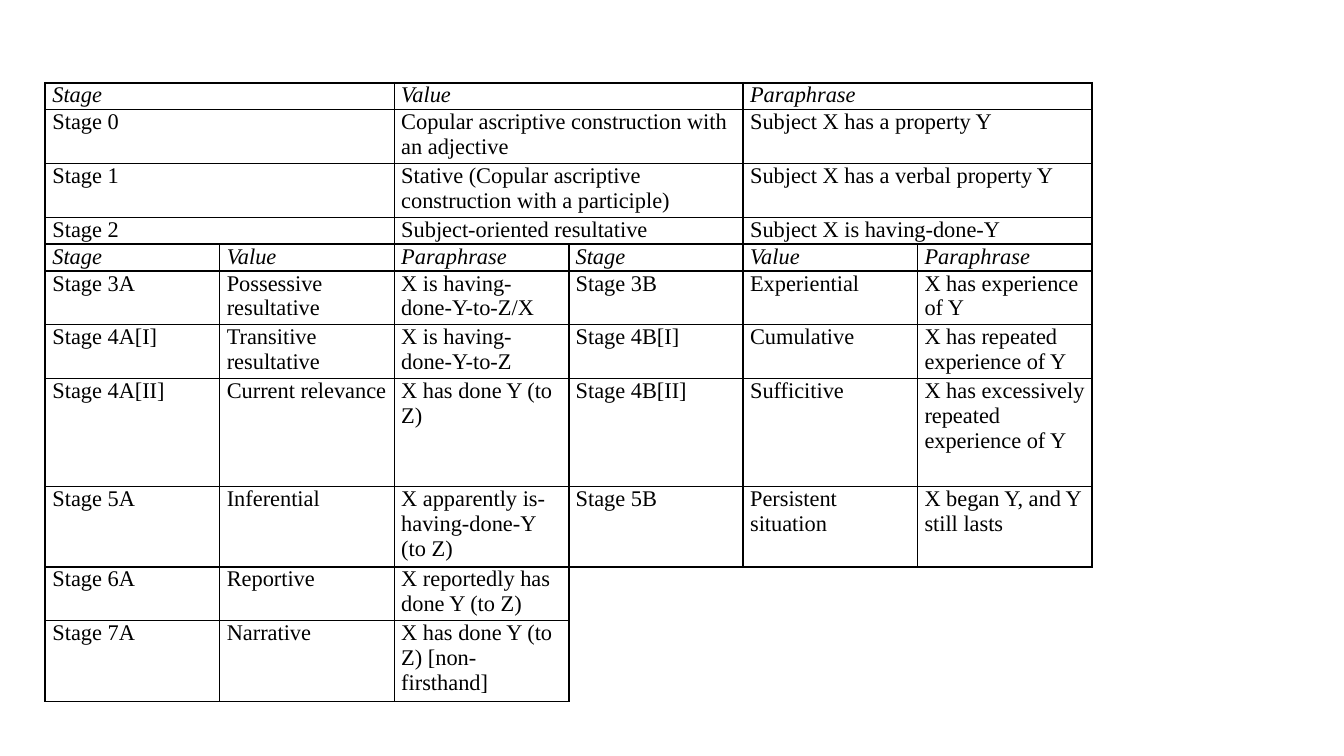
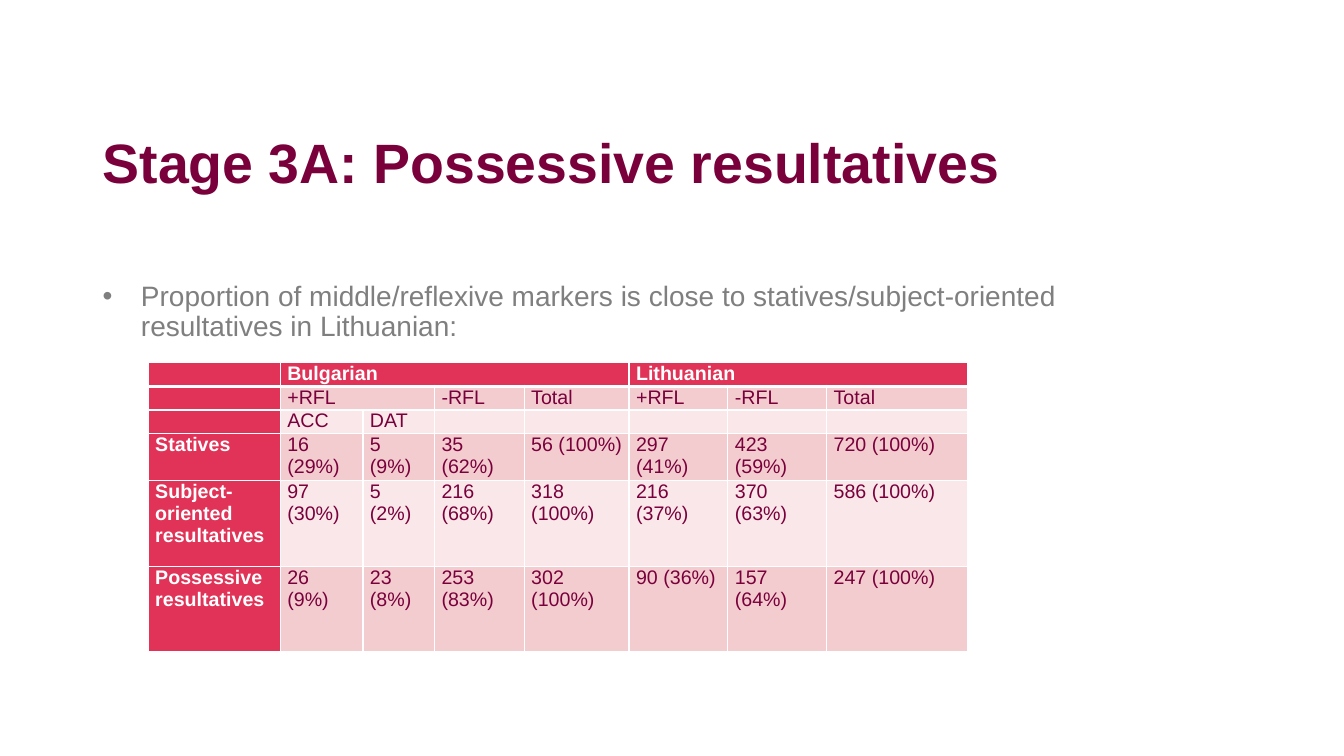
from dataclasses import dataclass
from typing import Optional

from lxml.etree import SubElement
from pptx import Presentation
from pptx.dml.color import RGBColor
from pptx.enum.text import MSO_ANCHOR, PP_ALIGN
from pptx.oxml.ns import qn
from pptx.util import Inches, Pt

BLACK, WHITE, GREY = "000000", "FFFFFF", "7F7F7F"
PLUM, CRIMSON, ROSE, BLUSH = "7A003B", "E03357", "F3CCD0", "F9E7E9"
SERIF, SANS = "Times New Roman", "Arial"
PLAIN_TABLE_STYLE = "{2D5ABB26-0587-4C30-8999-92F81FD0307C}"
Grid = list[list[Optional[str]]]


@dataclass(frozen=True)
class TextStyle:
    font: str
    size: float
    color: str
    bold: bool = False
    italic: bool = False
    align: PP_ALIGN = PP_ALIGN.LEFT


@dataclass(frozen=True)
class Borders:
    color: str
    left: float
    right: float
    top: float
    bottom: float


@dataclass(frozen=True)
class CellStyle:
    text: TextStyle
    fill: Optional[str] = None
    borders: Optional[Borders] = None


@dataclass(frozen=True)
class Block:
    first_row: int
    last_row: int
    first_column: int
    last_column: int

    def contains(self, row: int, column: int) -> bool:
        return (self.first_row <= row <= self.last_row
                and self.first_column <= column <= self.last_column)


TITLE = TextStyle(SANS, 39.6, PLUM, bold=True)
BODY = TextStyle(SANS, 20, GREY)
STAGE = TextStyle(SERIF, 16, BLACK)
STAGE_HEADER = TextStyle(SERIF, 16, BLACK, italic=True)
COUNT = TextStyle(SANS, 14, PLUM, align=PP_ALIGN.JUSTIFY)
COUNT_HEADER = TextStyle(SANS, 14, WHITE, bold=True, align=PP_ALIGN.JUSTIFY)

STAGES: Grid = [
    ["Stage", None, "Value", None, "Paraphrase", None],
    ["Stage 0", None, "Copular ascriptive construction with an adjective", None,
     "Subject X has a property Y", None],
    ["Stage 1", None, "Stative (Copular ascriptive construction with a participle)", None,
     "Subject X has a verbal property Y", None],
    ["Stage 2", None, "Subject-oriented resultative", None, "Subject X is having-done-Y", None],
    ["Stage", "Value", "Paraphrase", "Stage", "Value", "Paraphrase"],
    ["Stage 3A", "Possessive resultative", "X is having-done-Y-to-Z/X",
     "Stage 3B", "Experiential", "X has experience of Y"],
    ["Stage 4A[I]", "Transitive resultative", "X is having-done-Y-to-Z",
     "Stage 4B[I]", "Cumulative", "X has repeated experience of Y"],
    ["Stage 4A[II]", "Current relevance", "X has done Y (to Z)",
     "Stage 4B[II]", "Sufficitive", "X has excessively repeated experience of Y"],
    ["Stage 5A", "Inferential", "X apparently is-having-done-Y (to Z)",
     "Stage 5B", "Persistent situation", "X began Y, and Y still lasts"],
    ["Stage 6A", "Reportive", "X reportedly has done Y (to Z)", "", None, None],
    ["Stage 7A", "Narrative", "X has done Y (to Z) [non-firsthand]", "", None, None],
]
STAGE_LINES = [1, 2, 2, 1, 1, 2, 2, 4, 3, 2, 3]
STAGE_TABLE_HEIGHT = 6.14
STAGE_BLOCKS = [Block(0, 3, 0, 5), Block(4, 10, 0, 2), Block(4, 8, 3, 5)]

COUNTS: Grid = [
    ["", "Bulgarian", None, None, None, "Lithuanian", None, None],
    ["", "+RFL", None, "-RFL", "Total", "+RFL", "-RFL", "Total"],
    ["", "ACC", "DAT", "", "", "", "", ""],
    ["Statives", "16 (29%)", "5 (9%)", "35 (62%)", "56 (100%)",
     "297 (41%)", "423 (59%)", "720 (100%)"],
    ["Subject-oriented resultatives", "97 (30%)", "5 (2%)", "216 (68%)", "318 (100%)",
     "216 (37%)", "370 (63%)", "586 (100%)"],
    ["Possessive resultatives", "26 (9%)", "23 (8%)", "253 (83%)", "302 (100%)",
     "90 (36%)", "157 (64%)", "247 (100%)"],
]


def rgb(color: str) -> RGBColor:
    """Turn a hex string into a colour."""
    return RGBColor.from_string(color)


def write(paragraph, text: str, style: TextStyle) -> None:
    """Add one styled run, or size the paragraph when it has no text."""
    paragraph.alignment = style.align
    if not text:
        end = SubElement(paragraph._p, qn("a:endParaRPr"))
        end.set("sz", str(round(style.size * 100)))
        return
    run = paragraph.add_run()
    run.text = text
    run.font.name = style.font
    run.font.size = Pt(style.size)
    run.font.bold = style.bold
    run.font.italic = style.italic
    run.font.color.rgb = rgb(style.color)


def add_text(slide, top: float, height: float, text: str, style: TextStyle):
    """Add a text box in the shared text column and return its paragraph."""
    shape = slide.shapes.add_textbox(Inches(0.92), Inches(top), Inches(9.9), Inches(height))
    frame = shape.text_frame
    frame.word_wrap = True
    frame.vertical_anchor = MSO_ANCHOR.TOP
    paragraph = frame.paragraphs[0]
    write(paragraph, text, style)
    paragraph.line_spacing = 0.9
    return paragraph


def add_bullet(paragraph, color: str) -> None:
    """Give a paragraph a hanging round bullet."""
    properties = paragraph._p.get_or_add_pPr()
    properties.set("marL", str(Inches(0.38)))
    properties.set("indent", str(-Inches(0.38)))
    bullet_color = SubElement(properties, qn("a:buClr"))
    SubElement(bullet_color, qn("a:srgbClr")).set("val", color)
    SubElement(properties, qn("a:buFont")).set("typeface", SANS)
    SubElement(properties, qn("a:buChar")).set("char", "•")


def set_borders(cell, borders: Borders) -> None:
    """Draw the four edges of a cell."""
    properties = cell._tc.get_or_add_tcPr()
    edges = {"a:lnL": borders.left, "a:lnR": borders.right,
             "a:lnT": borders.top, "a:lnB": borders.bottom}
    for position, (tag, width) in enumerate(edges.items()):
        line = SubElement(properties, qn(tag))
        line.set("w", str(Pt(width)))
        fill = SubElement(line, qn("a:solidFill"))
        SubElement(fill, qn("a:srgbClr")).set("val", borders.color)
        properties.insert(position, line)


def style_cell(cell, style: CellStyle) -> None:
    """Set the margins, fill and edges of a cell."""
    cell.margin_left = cell.margin_right = Inches(0.07)
    cell.margin_top = cell.margin_bottom = 0
    if style.fill:
        cell.fill.solid()
        cell.fill.fore_color.rgb = rgb(style.fill)
    else:
        cell.fill.background()
    if style.borders:
        set_borders(cell, style.borders)


def stage_style(row: int, column: int, span: int) -> CellStyle:
    """Frame each block of stages with a thicker line."""
    text = STAGE_HEADER if row in (0, 4) else STAGE
    for block in STAGE_BLOCKS:
        if block.contains(row, column):
            edges = (column == block.first_column, column + span - 1 == block.last_column,
                     row == block.first_row, row == block.last_row)
            widths = [1.5 if outer else 1 for outer in edges]
            return CellStyle(text, borders=Borders(BLACK, *widths))
    return CellStyle(text)


def count_style(row: int, column: int, span: int) -> CellStyle:
    """Colour the header row and column, and band the other rows."""
    borders = Borders(WHITE, 1, 1, 3 if row == 1 else 1, 3 if row == 0 else 1)
    if row == 0 or column == 0:
        return CellStyle(COUNT_HEADER, CRIMSON, borders)
    return CellStyle(COUNT, ROSE if row % 2 else BLUSH, borders)


def add_grid(slide, left: float, top: float, widths: list[float], heights: list[float],
             grid: Grid, style_for) -> None:
    """Add a table in which None continues the cell to its left."""
    frame = slide.shapes.add_table(len(heights), len(widths), Inches(left), Inches(top),
                                   Inches(sum(widths)), Inches(sum(heights)))
    table = frame.table
    table.first_row = table.horz_banding = False
    table._tbl.tblPr.find(qn("a:tableStyleId")).text = PLAIN_TABLE_STYLE
    for column, width in zip(table.columns, widths):
        column.width = Inches(width)
    for row, height in zip(table.rows, heights):
        row.height = Inches(height)
    for row, texts in enumerate(grid):
        starts = [column for column, text in enumerate(texts) if text is not None]
        for start, stop in zip(starts, starts[1:] + [len(texts)]):
            style = style_for(row, start, stop - start)
            for column in range(start, stop):
                cell = table.cell(row, column)
                style_cell(cell, style)
                write(cell.text_frame.paragraphs[0], texts[column] or "", style.text)
            if stop - start > 1:
                table.cell(row, start).merge(table.cell(row, stop - 1))


def add_slide(presentation):
    """Add a blank white slide."""
    slide = presentation.slides.add_slide(presentation.slide_layouts[6])
    slide.background.fill.solid()
    slide.background.fill.fore_color.rgb = rgb(WHITE)
    return slide


def build_stages(presentation) -> None:
    """Build the overview of all stages."""
    line_height = STAGE_TABLE_HEIGHT / sum(STAGE_LINES)
    heights = [lines * line_height for lines in STAGE_LINES]
    add_grid(add_slide(presentation), 0.45, 0.82, [1.73] * 6, heights, STAGES, stage_style)


def build_possessive(presentation) -> None:
    """Build the slide on possessive resultatives."""
    slide = add_slide(presentation)
    add_text(slide, 1.3, 1.23, "Stage 3A: Possessive resultatives", TITLE)
    paragraph = add_text(
        slide, 2.75, 0.8,
        "Proportion of middle/reflexive markers is close to "
        "statives/subject-oriented resultatives in Lithuanian:", BODY)
    add_bullet(paragraph, GREY)
    add_grid(slide, 1.47, 3.6, [1.31, 0.82, 0.71, 0.89, 1.04, 0.98, 0.98, 1.4],
             [0.22, 0.22, 0.22, 0.44, 0.85, 0.85], COUNTS, count_style)


def main() -> None:
    """Build and save the presentation."""
    presentation = Presentation()
    presentation.slide_width = Inches(13.33)
    presentation.slide_height = Inches(7.5)
    build_stages(presentation)
    build_possessive(presentation)
    presentation.save("out.pptx")


if __name__ == "__main__":
    main()
